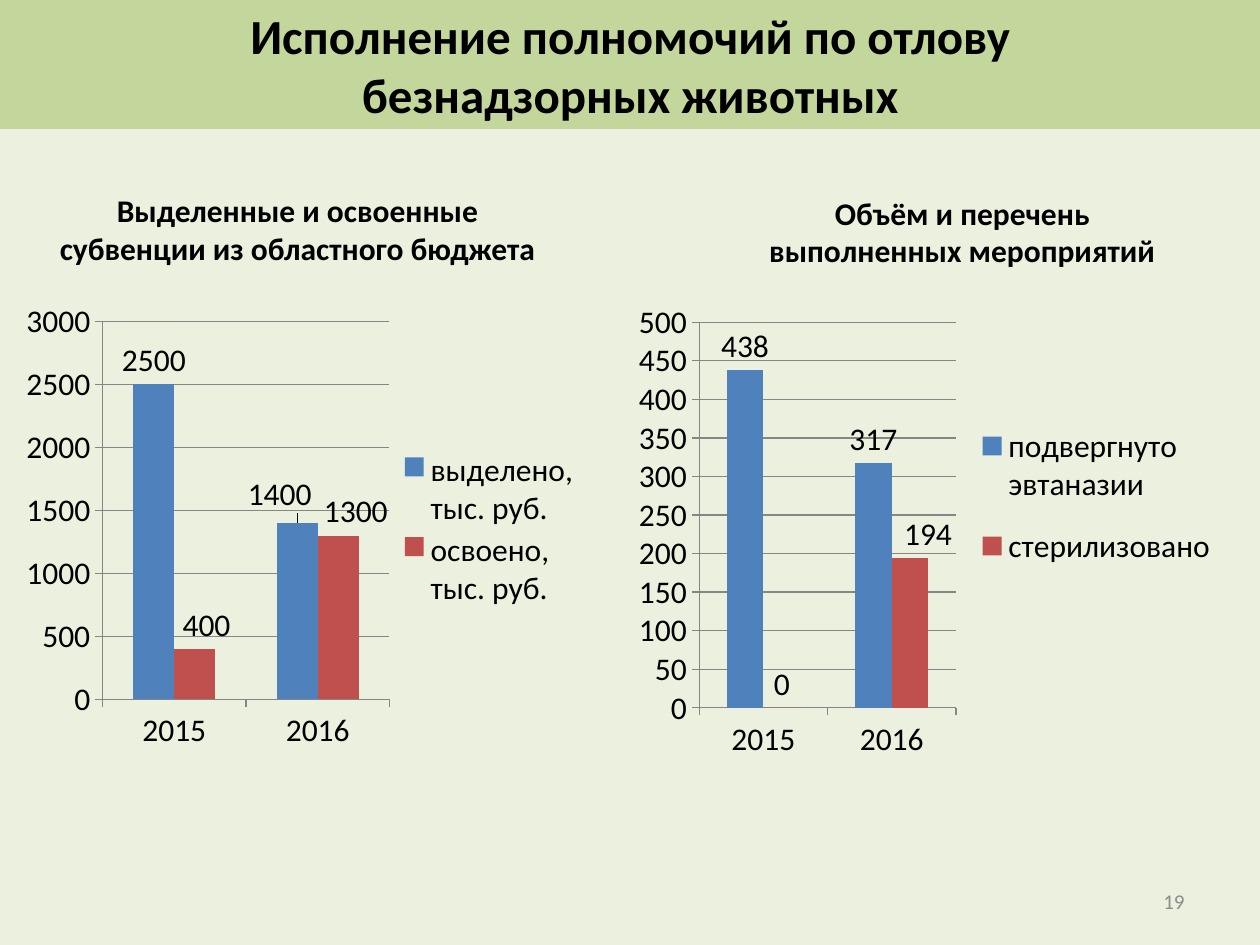
from lxml.etree import SubElement
from pptx import Presentation
from pptx.chart.data import CategoryChartData
from pptx.dml.color import RGBColor
from pptx.enum.chart import XL_CHART_TYPE, XL_LABEL_POSITION, XL_LEGEND_POSITION, XL_TICK_MARK
from pptx.enum.text import MSO_ANCHOR, PP_ALIGN
from pptx.oxml.ns import qn
from pptx.util import Cm, Pt

FONT = "Calibri"
BLACK = RGBColor(0x00, 0x00, 0x00)
GREY = RGBColor(0x8C, 0x8C, 0x8C)
AXIS_GREY = RGBColor(0x86, 0x86, 0x86)
PALE_GREEN = RGBColor(0xEB, 0xF1, 0xDE)
GREEN = RGBColor(0xC3, 0xD6, 0x9B)
SERIES_COLORS = (RGBColor(0x4F, 0x81, 0xBD), RGBColor(0xC0, 0x50, 0x4D))
YEARS = ("2015", "2016")


def place(part, box):
    part.left, part.top, part.width, part.height = (Cm(length) for length in box)


def write_lines(frame, lines, size, align, color=BLACK, bold=True, anchor=MSO_ANCHOR.TOP):
    frame.word_wrap = True
    frame.vertical_anchor = anchor
    for number, line in enumerate(lines):
        paragraph = frame.paragraphs[0] if number == 0 else frame.add_paragraph()
        paragraph.alignment = align
        run = paragraph.add_run()
        run.text = line
        run.font.name = FONT
        run.font.size = Pt(size)
        run.font.bold = bold
        run.font.color.rgb = color


def add_text(slide, box, lines, size, align, **style):
    text_box = slide.shapes.add_textbox(*(Cm(length) for length in box))
    write_lines(text_box.text_frame, lines, size, align, **style)


def add_title_band(slide, box, lines):
    title = slide.shapes.title
    place(title, box)
    title.fill.solid()
    title.fill.fore_color.rgb = GREEN
    write_lines(title.text_frame, lines, 28, PP_ALIGN.CENTER, anchor=MSO_ANCHOR.MIDDLE)


def set_layout(layout, **settings):
    """Fill a chart layout element with manual settings."""
    for child in list(layout):
        layout.remove(child)
    manual = SubElement(layout, qn("c:manualLayout"))
    for tag, value in settings.items():
        SubElement(manual, qn(f"c:{tag}")).set("val", str(value))


def layout_after(element):
    layout = element.makeelement(qn("c:layout"))
    element.addnext(layout)
    return layout


def frame_layout(x, y, w, h):
    return dict(xMode="edge", yMode="edge", x=x, y=y, w=w, h=h)


def format_axis(axis):
    axis.major_tick_mark = XL_TICK_MARK.OUTSIDE
    axis.minor_tick_mark = XL_TICK_MARK.NONE
    axis.format.line.color.rgb = AXIS_GREY


def label_series(series, color, shifts):
    series.format.fill.solid()
    series.format.fill.fore_color.rgb = color
    series.data_labels.show_value = True
    series.data_labels.position = XL_LABEL_POSITION.OUTSIDE_END
    # Labels moved sideways so that neighbours do not collide
    for point, (x, y) in shifts.items():
        series.points[point].data_label.position = XL_LABEL_POSITION.OUTSIDE_END
        index = series.data_labels._element.xpath(f'c:dLbl/c:idx[@val="{point}"]')[0]
        set_layout(layout_after(index), x=x, y=y)


def add_column_chart(slide, box, measures, top, step, plot_box, legend_box, shifts):
    data = CategoryChartData()
    data.categories = YEARS
    for name, values in measures:
        data.add_series(name, values)
    chart = slide.shapes.add_chart(
        XL_CHART_TYPE.COLUMN_CLUSTERED, *(Cm(length) for length in box), data).chart
    chart.has_title = False
    chart.font.name = FONT
    chart.font.size = Pt(18)
    chart.font.color.rgb = BLACK

    # Axes
    format_axis(chart.category_axis)
    values_axis = chart.value_axis
    format_axis(values_axis)
    values_axis.minimum_scale, values_axis.maximum_scale = 0, top
    values_axis.major_unit = step
    values_axis.major_gridlines.format.line.color.rgb = AXIS_GREY

    # Columns
    columns = chart.plots[0]
    columns.gap_width = 150
    columns.overlap = 0
    columns.vary_by_categories = False
    for number, series in enumerate(columns.series):
        label_series(series, SERIES_COLORS[number], shifts[number])

    # Legend and plot area
    chart.has_legend = True
    chart.legend.position = XL_LEGEND_POSITION.RIGHT
    chart.legend.include_in_layout = False
    legend_position = chart.legend._element.find(qn("c:legendPos"))
    set_layout(layout_after(legend_position), **frame_layout(*legend_box))
    plot_area = chart._chartSpace.chart.plotArea
    layout = plot_area.find(qn("c:layout"))
    if layout is None:
        layout = plot_area.makeelement(qn("c:layout"))
        plot_area.insert(0, layout)
    set_layout(layout, layoutTarget="inner", **frame_layout(*plot_box))


def main():
    deck = Presentation()
    deck.slide_width, deck.slide_height = Cm(25.4), Cm(19.05)
    slide = deck.slides.add_slide(deck.slide_layouts[5])
    slide.background.fill.solid()
    slide.background.fill.fore_color.rgb = PALE_GREEN

    add_title_band(slide, (0, 0, 25.4, 2.6),
                   ("Исполнение полномочий по отлову", "безнадзорных животных"))

    # Subsidies
    add_text(slide, (0.9, 3.73, 10.2, 1.8),
             ("Выделенные и освоенные субвенции из областного бюджета",),
             18, PP_ALIGN.CENTER)
    add_column_chart(
        slide, (0.3, 5.92, 11.8, 9.4),
        (("выделено, тыс. руб.", (2500, 1400)), ("освоено, тыс. руб.", (400, 1300))),
        3000, 500, (0.15, 0.06, 0.49, 0.81), (0.64, 0.33, 0.34, 0.35),
        ({1: (-0.03, -0.01)}, {0: (0.02, 0), 1: (0.03, 0)}))

    # Measures carried out
    add_text(slide, (14.3, 3.78, 10.2, 1.8),
             ("Объём и перечень", "выполненных мероприятий"), 18, PP_ALIGN.CENTER)
    add_column_chart(
        slide, (12.65, 5.92, 12.04, 9.6),
        (("подвергнуто эвтаназии", (438, 317)), ("стерилизовано", (0, 194))),
        500, 50, (0.12, 0.06, 0.43, 0.81), (0.58, 0.23, 0.41, 0.39),
        ({}, {1: (0.03, 0)}))

    # Slide number
    add_text(slide, (18.2, 17.65, 5.93, 1.02), ("19",), 12, PP_ALIGN.RIGHT,
             color=GREY, bold=False, anchor=MSO_ANCHOR.MIDDLE)
    deck.save("out.pptx")


if __name__ == "__main__":
    main()
